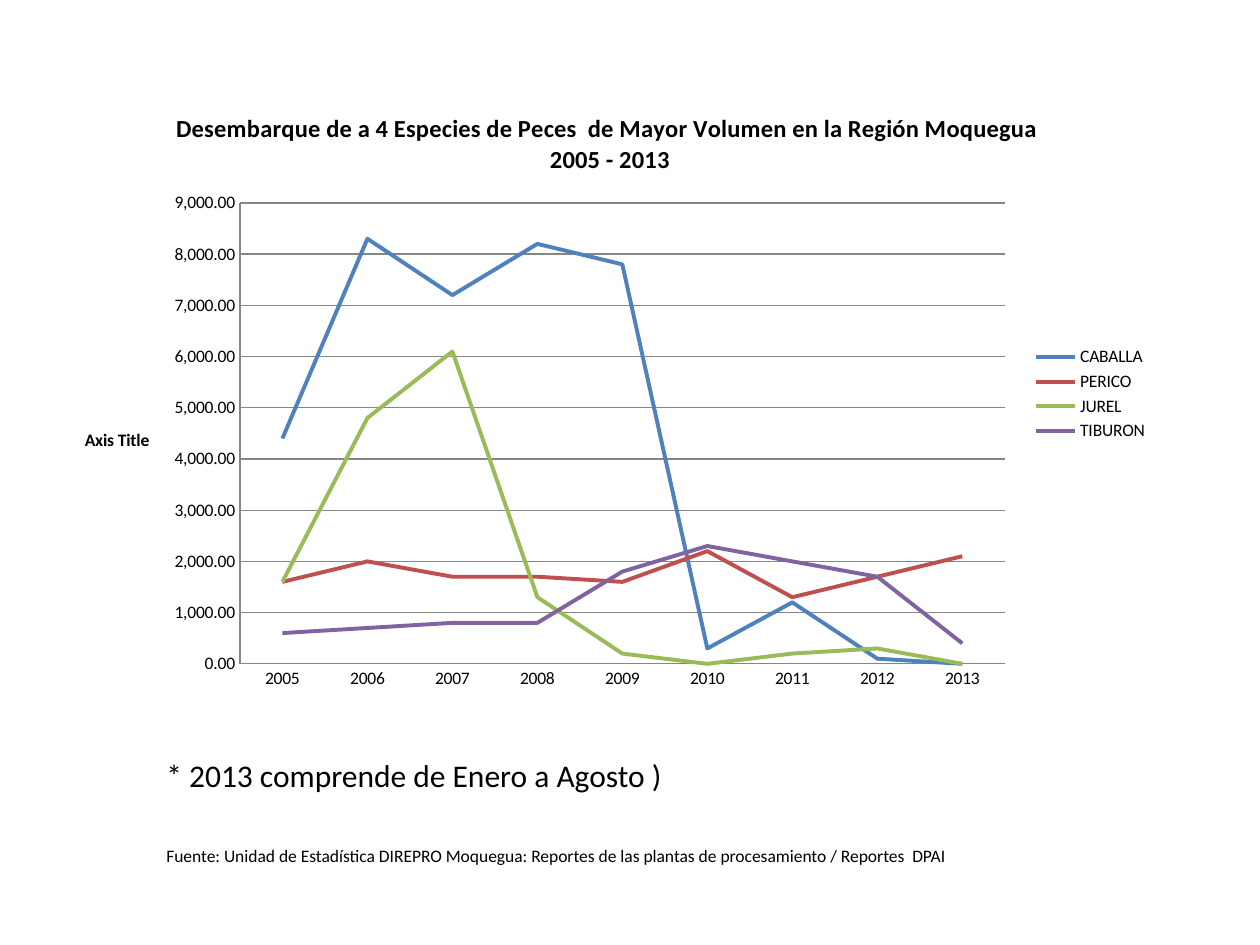
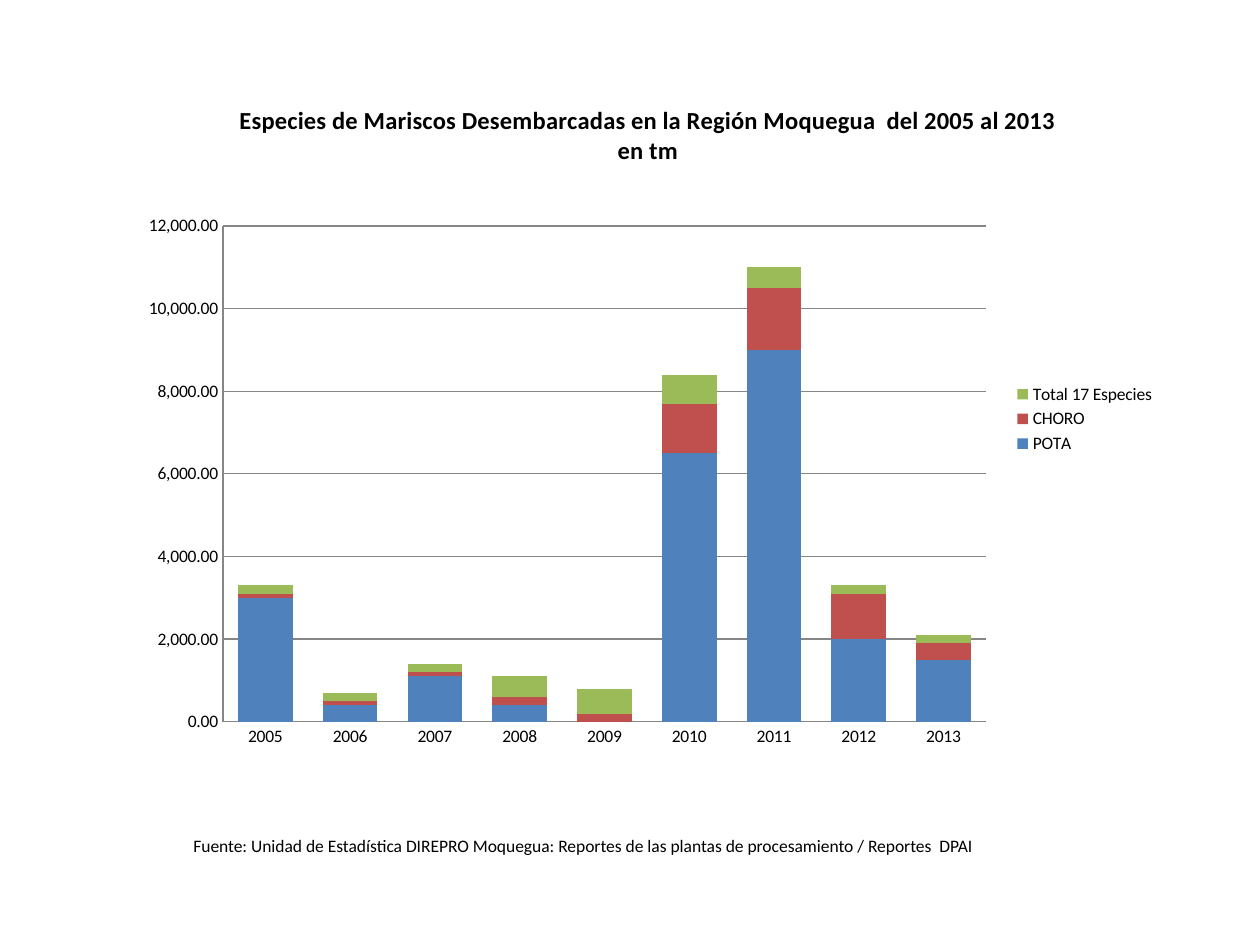
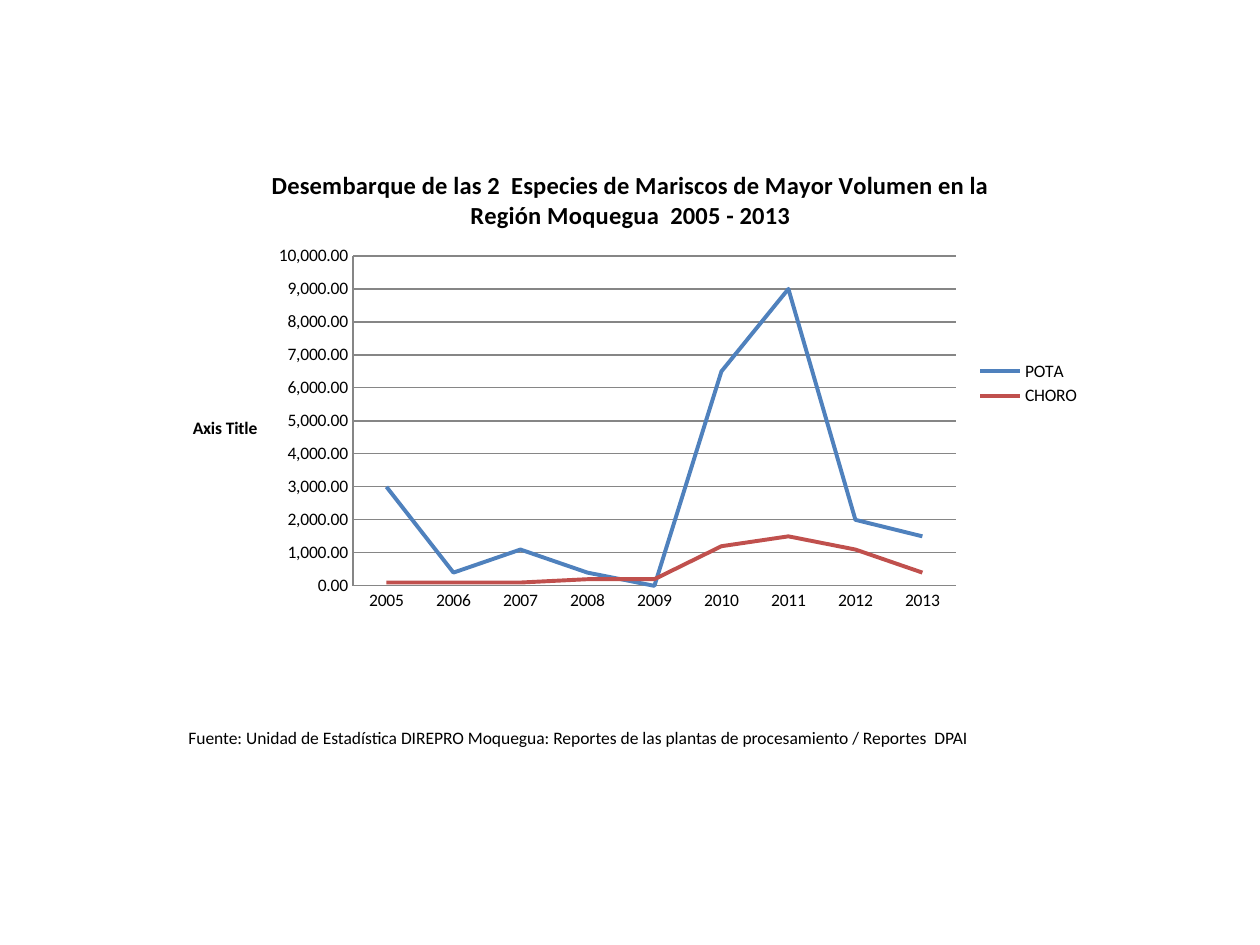
from lxml import etree
from pptx import Presentation
from pptx.chart.data import CategoryChartData
from pptx.dml.color import RGBColor
from pptx.enum.chart import XL_CHART_TYPE, XL_LEGEND_POSITION, XL_TICK_MARK
from pptx.enum.text import MSO_AUTO_SIZE
from pptx.oxml import parse_xml
from pptx.oxml.ns import nsdecls, qn
from pptx.util import Pt

PX = 914400 // 126
FONT = "Calibri"
BLACK, GRAY = "000000", "868686"
BLUE, RED, GREEN, PURPLE = "4F81BD", "C0504D", "9BBB59", "8064A2"
YEARS = [str(year) for year in range(2005, 2014)]
SOURCE = ("Fuente: Unidad de Estadística DIREPRO Moquegua: "
          "Reportes de las plantas de procesamiento / Reportes  DPAI")

# Catches in tonnes: name, colour, values
POTA = ("POTA", BLUE, [3000, 400, 1100, 400, 0, 6500, 9000, 2000, 1500])
CHORO = ("CHORO", RED, [100, 100, 100, 200, 200, 1200, 1500, 1100, 400])
OTHERS = ("Total 17 Especies", GREEN, [200, 200, 200, 500, 600, 700, 500, 200, 200])
FISH = [
    ("CABALLA", BLUE, [4400, 8300, 7200, 8200, 7800, 300, 1200, 100, 0]),
    ("PERICO", RED, [1600, 2000, 1700, 1700, 1600, 2200, 1300, 1700, 2100]),
    ("JUREL", GREEN, [1600, 4800, 6100, 1300, 200, 0, 200, 300, 0]),
    ("TIBURON", PURPLE, [600, 700, 800, 800, 1800, 2300, 2000, 1700, 400]),
]

# Boxes are left, top, width, height in px; notes are text, size, box, wrap
SLIDES = [
    dict(title="Desembarque de a 4 Especies de Peces  de Mayor Volumen "
               "en la Región Moquegua  2005 - 2013",
         kind=XL_CHART_TYPE.LINE, series=FISH, top=9000, step=1000,
         box=(59, 88, 1102, 612), plot=(240, 203, 765, 461),
         notes=[("* 2013 comprende de Enero a Agosto )", 18, (154, 750, 527, 50), False),
                (SOURCE, 10, (154, 839, 907, 34), True)]),
    dict(title="Especies de Mariscos Desembarcadas en la Región Moquegua  "
               "del 2005 al 2013 en tm",
         kind=XL_CHART_TYPE.COLUMN_STACKED, series=[POTA, CHORO, OTHERS],
         top=12000, step=2000,
         box=(128, 78, 1040, 682), plot=(223, 226, 763, 496),
         notes=[(SOURCE, 10, (181, 829, 907, 34), True)]),
    dict(title="Desembarque de las 2  Especies de Mariscos de Mayor Volumen "
               "en la Región Moquegua  2005 - 2013",
         kind=XL_CHART_TYPE.LINE, series=[POTA, CHORO], top=10000, step=1000,
         box=(168, 147, 925, 473), plot=(353, 256, 603, 330),
         notes=[(SOURCE, 10, (176, 721, 907, 34), True)]),
]


def rgb(color):
    return RGBColor.from_string(color)


def set_font(font, size, bold=False):
    font.name, font.size, font.bold = FONT, Pt(size), bold
    font.color.rgb = rgb(BLACK)


prs = Presentation()
prs.slide_width, prs.slide_height = 1260 * PX, 945 * PX

for page in SLIDES:
    s = prs.slides.add_slide(prs.slide_layouts[6])
    is_line = page["kind"] == XL_CHART_TYPE.LINE

    # Chart with its title and legend
    data = CategoryChartData(number_format="#,##0.00")
    data.categories = YEARS
    for name, color, values in page["series"]:
        data.add_series(name, values)
    box = [n * PX for n in page["box"]]
    chart = s.shapes.add_chart(page["kind"], *box, data).chart
    set_font(chart.font, 10)
    chart.has_title = True
    p = chart.chart_title.text_frame.paragraphs[0]
    p.text = page["title"]
    set_font(p.font, 14, True)
    chart.has_legend = True
    chart.legend.position = XL_LEGEND_POSITION.RIGHT
    chart.legend.include_in_layout = False

    # Series
    plot = chart.plots[0]
    plot.vary_by_categories = False
    if not is_line:
        plot.gap_width, plot.overlap = 55, 100
    for series, (name, color, values) in zip(plot.series, page["series"]):
        if is_line:
            series.smooth = False
            series.format.line.color.rgb = rgb(color)
            series.format.line.width = Pt(2.25)
        else:
            series.format.fill.solid()
            series.format.fill.fore_color.rgb = rgb(color)

    # Axes and gridlines
    val_axis = chart.value_axis
    val_axis.minimum_scale, val_axis.maximum_scale = 0, page["top"]
    val_axis.major_unit = page["step"]
    val_axis.has_major_gridlines = True
    val_axis.tick_labels.number_format = "#,##0.00"
    val_axis.tick_labels.number_format_is_linked = False
    for axis in (chart.category_axis, val_axis):
        axis.major_tick_mark = axis.minor_tick_mark = XL_TICK_MARK.NONE
    for part in (chart.category_axis, val_axis, val_axis.major_gridlines):
        part.format.line.color.rgb = rgb(GRAY)
        part.format.line.width = Pt(0.75)
    if is_line:
        p = val_axis.axis_title.text_frame.paragraphs[0]
        p.text = "Axis Title"
        set_font(p.font, 10, True)
        body = val_axis.axis_title.element.find(".//" + qn("a:bodyPr"))
        body.set("rot", "0")
        body.set("vert", "horz")

    # Plot area as fractions of the chart box
    left, top, width, height = page["box"]
    x, y, w, h = page["plot"]
    area = chart.element.find(".//" + qn("c:plotArea"))
    for old in area.findall(qn("c:layout")):
        area.remove(old)
    layout = parse_xml(f"<c:layout {nsdecls('c')}><c:manualLayout/></c:layout>")
    for tag, val in [("layoutTarget", "inner"), ("xMode", "edge"), ("yMode", "edge"),
                     ("x", (x - left) / width), ("y", (y - top) / height),
                     ("w", w / width), ("h", h / height)]:
        etree.SubElement(layout[0], qn("c:" + tag)).set("val", str(val))
    area.insert(0, layout)

    # Notes below the chart
    for text, size, place, wrap in page["notes"]:
        tf = s.shapes.add_textbox(*[n * PX for n in place]).text_frame
        tf.word_wrap = wrap
        tf.auto_size = MSO_AUTO_SIZE.SHAPE_TO_FIT_TEXT
        p = tf.paragraphs[0]
        p.text = text
        set_font(p.font, size)

prs.save("out.pptx")
